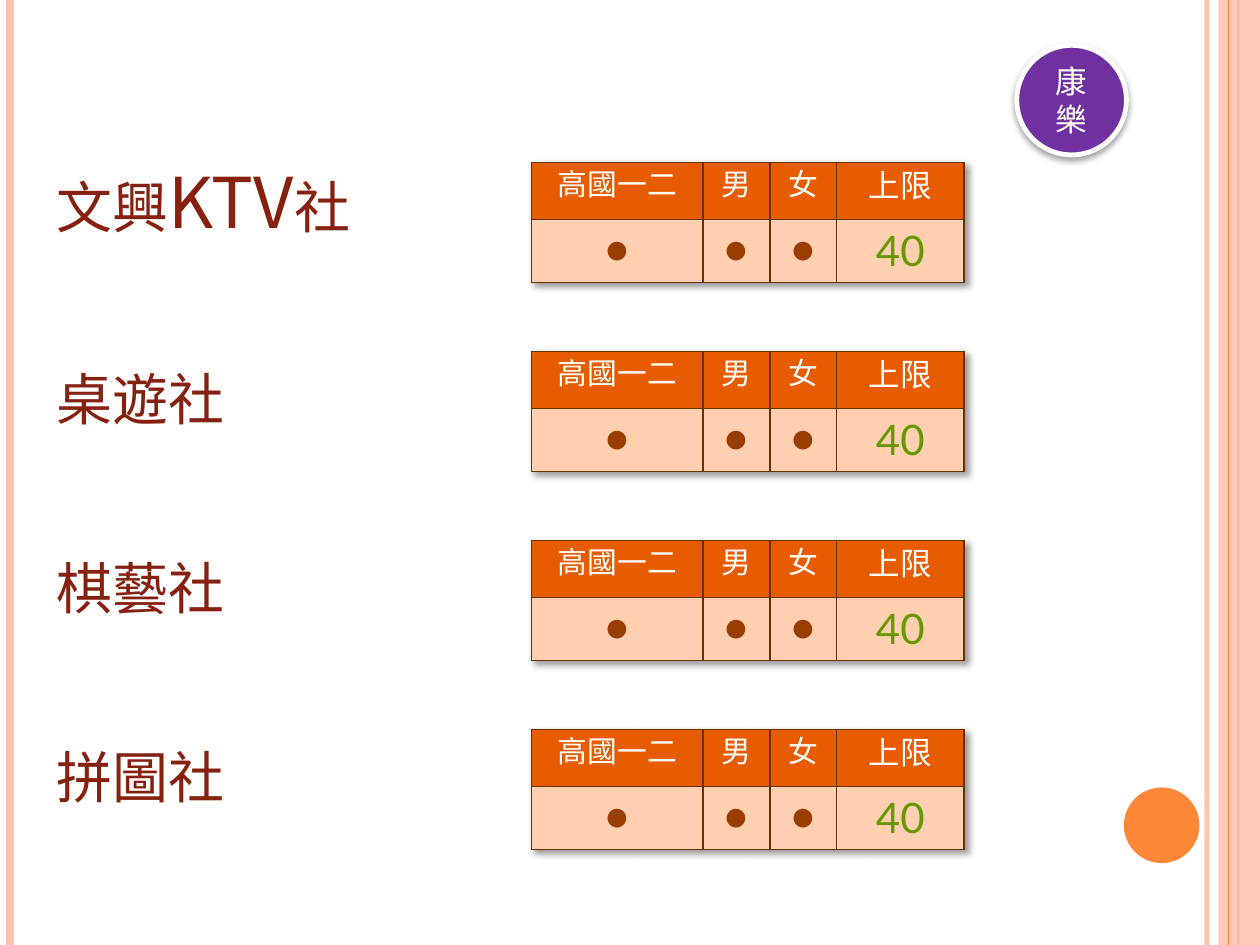
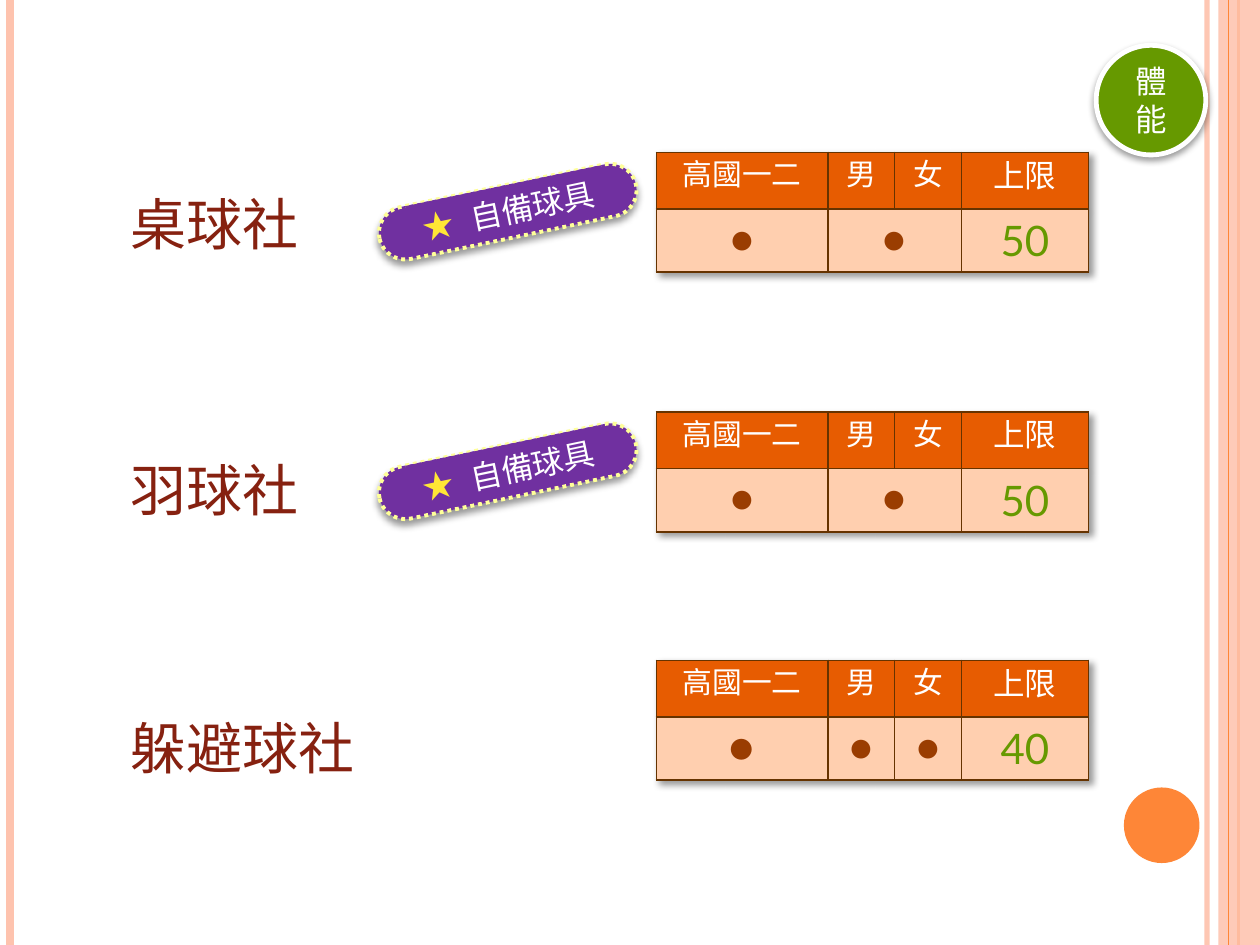
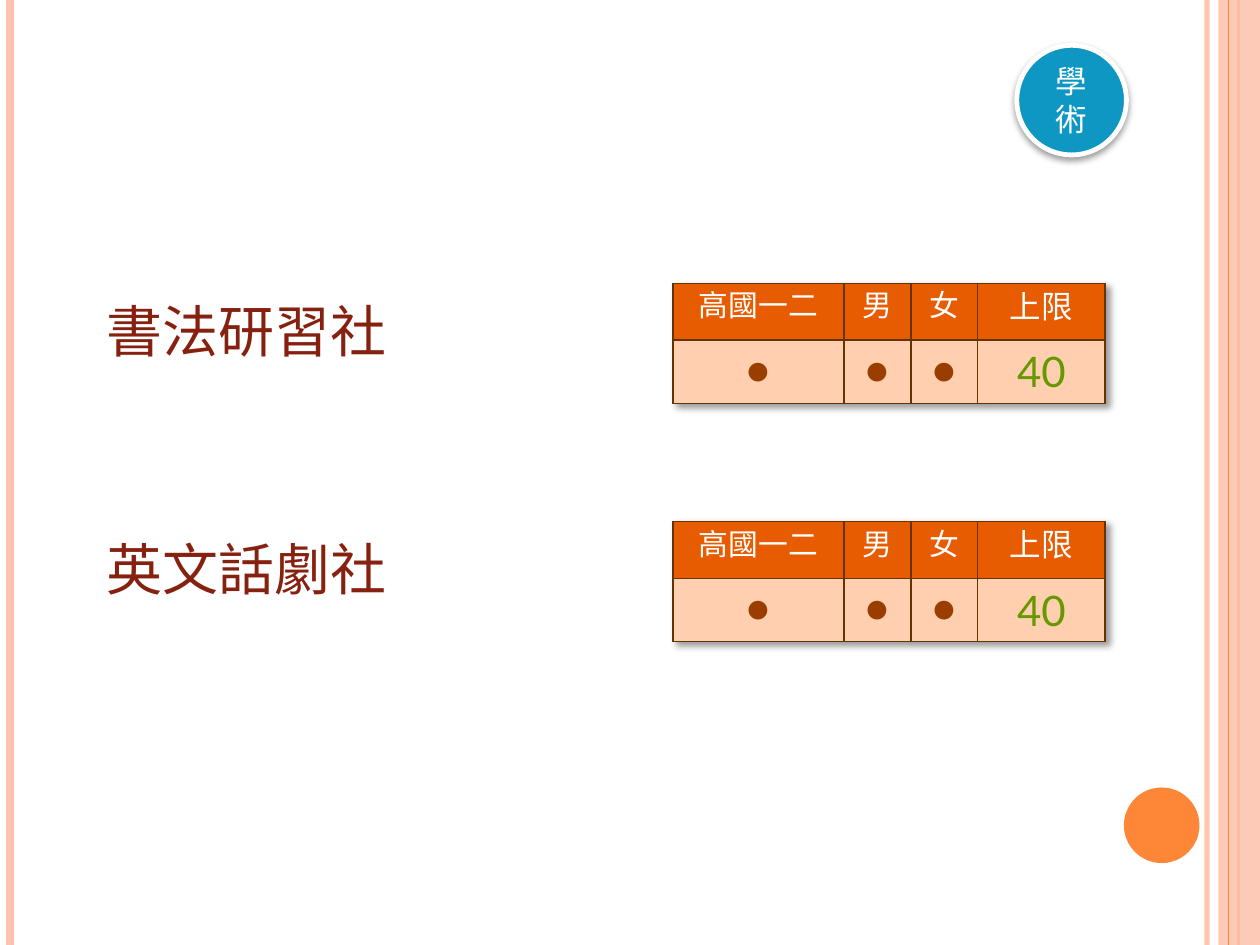
import pptx
import pptx.util
import pptx.dml.color
import pptx.enum.dml
import pptx.enum.shapes
import pptx.enum.text
import pptx.oxml
import pptx.oxml.ns
from lxml import etree

Inches = pptx.util.Inches
Pt = pptx.util.Pt
SHAPE = pptx.enum.shapes.MSO_SHAPE
ANCHOR = pptx.enum.text.MSO_ANCHOR
CENTER = pptx.enum.text.PP_ALIGN.CENTER
qn = pptx.oxml.ns.qn

WHITE, PEACH, ORANGE = "FFFFFF", "FEC3AE", "FE8637"
PURPLE, GREEN, BLUE = "7030A0", "669900", "0E97C2"
HEADER_FILL, BODY_FILL, BORDER = "E75C01", "FFCFAF", "663300"
MARK, TITLE_COLOR = "9A3D01", "862110"
STAR, PILL_EDGE = "FFE636", "FFFF99"
DISPLAY, TITLE_FONT = "TeX Gyre Adventor", "Noto Sans CJK SC"
HEADINGS = [("高國一二", 17), ("男", 17), ("女", 17), ("上限", 18)]
COLUMNS = [1.36, 0.53, 0.53, 1.01]
ROW_HEIGHT = 0.45


def rgb(value):
    return pptx.dml.color.RGBColor.from_string(value)


def inches(*lengths):
    return [Inches(length) for length in lengths]


def add_run(paragraph, text, size, font, color, **attributes):
    run = paragraph.add_run()
    run.text = text
    for key, value in {"size": Pt(size), "name": font, "bold": False}.items():
        setattr(run.font, key, value)
    run.font.color.rgb = rgb(color)
    properties = run.font._element
    etree.SubElement(properties, qn("a:ea"), typeface=font)
    for key, value in attributes.items():
        properties.set(key, value)


def set_alpha(element, percent):
    for color in element.iter(qn("a:srgbClr")):
        etree.SubElement(color, qn("a:alpha"), val=str(percent * 1000))


def add_shadow(effects, blur, distance, angle):
    shadow = etree.SubElement(effects, qn("a:outerShdw"), blurRad=str(Pt(blur)),
                              dist=str(Pt(distance)), dir=str(angle * 60000),
                              algn="tl", rotWithShape="0")
    etree.SubElement(shadow, qn("a:srgbClr"), val="000000")
    set_alpha(shadow, 40)


def filled_shape(shapes, kind, box, color, edge=None, edge_width=0):
    shape = shapes.add_shape(kind, *inches(*box))
    shape.shadow.inherit = False
    shape.fill.solid()
    shape.fill.fore_color.rgb = rgb(color)
    if edge:
        shape.line.color.rgb = rgb(edge)
        shape.line.width = Pt(edge_width)
    else:
        shape.line.fill.background()
    return shape


def stripe(slide, x, color, width, alpha=100):
    line = slide.shapes.add_connector(pptx.enum.shapes.MSO_CONNECTOR.STRAIGHT,
                                      *inches(x, 0, x, 7.5))
    line.line.color.rgb = rgb(color)
    line.line.width = Pt(width)
    properties = line.element.spPr
    if alpha < 100:
        set_alpha(properties, alpha)
    etree.SubElement(properties, qn("a:effectLst"))


def frame(slide):
    stripe(slide, 9.58, PEACH, 3, 93)
    stripe(slide, 0.08, PEACH, 4.5)
    stripe(slide, 9.83, ORANGE, 1.5)
    band = filled_shape(slide.shapes, SHAPE.RECTANGLE, (9.67, 0, 0.33, 7.5), PEACH)
    set_alpha(band.element.spPr, 87)
    stripe(slide, 9.75, ORANGE, 0.75)
    filled_shape(slide.shapes, SHAPE.OVAL, (8.92, 6.25, 0.6, 0.6), ORANGE)


def category_badge(slide, left, category, color):
    badge = filled_shape(slide.shapes, SHAPE.OVAL, (left, 0.36, 0.87, 0.87),
                         color, WHITE, 2.75)
    add_shadow(badge.element.spPr.find(qn("a:effectLst")), 4, 2, 90)
    frame_text = badge.text_frame
    for key, value in {"word_wrap": True, "vertical_anchor": ANCHOR.MIDDLE}.items():
        setattr(frame_text, key, value)
    paragraph = frame_text.paragraphs[0]
    paragraph.alignment = CENTER
    add_run(paragraph, category, 18, DISPLAY, WHITE)


def club_title(slide, left, top, width, parts):
    title = slide.shapes.add_textbox(*inches(left, top, width, 1.25)).text_frame
    for key, value in {"word_wrap": True, "vertical_anchor": ANCHOR.BOTTOM}.items():
        setattr(title, key, value)
    for text, size in parts:
        add_run(title.paragraphs[0], text, size, TITLE_FONT, TITLE_COLOR, cap="small")


def fill_cell(cell, text, size, font, color, fill, anchor):
    cell.fill.solid()
    cell.fill.fore_color.rgb = rgb(fill)
    cell.vertical_anchor = anchor
    properties = cell._tc.get_or_add_tcPr()
    for position, side in enumerate("LRTB"):
        border = etree.Element(qn(f"a:ln{side}"), w=str(Pt(1)))
        solid = etree.SubElement(border, qn("a:solidFill"))
        etree.SubElement(solid, qn("a:srgbClr"), val=BORDER)
        properties.insert(position, border)
    if text:
        paragraph = cell.text_frame.paragraphs[0]
        paragraph.alignment = CENTER
        add_run(paragraph, text, size, font, color)


def quota_table(slide, left, top, limit, mixed=False, first_mark=18):
    table = slide.shapes.add_table(2, 4, *inches(left, top, sum(COLUMNS),
                                                 2 * ROW_HEIGHT)).table
    table.horz_banding = False
    effects = etree.Element(qn("a:effectLst"))
    add_shadow(effects, 4, 3, 45)
    table._tbl.tblPr.insert(0, effects)
    for column, width in zip(table.columns, COLUMNS):
        column.width = Inches(width)
    for row in table.rows:
        row.height = Inches(ROW_HEIGHT)
    for index, (heading, size) in enumerate(HEADINGS):
        fill_cell(table.cell(0, index), heading, size, "Arial", WHITE,
                  HEADER_FILL, ANCHOR.TOP)
    if mixed:
        table.cell(1, 1).merge(table.cell(1, 2))
    marks = [("●", first_mark), ("●", 18), ("" if mixed else "●", 18)]
    for index, (mark, size) in enumerate(marks):
        fill_cell(table.cell(1, index), mark, size, DISPLAY, MARK,
                  BODY_FILL, ANCHOR.MIDDLE)
    fill_cell(table.cell(1, 3), limit, 24, "Lato", GREEN, BODY_FILL, ANCHOR.MIDDLE)


def equipment_pill(slide, left, top):
    shapes = slide.shapes.add_group_shape().shapes
    pill = filled_shape(shapes, SHAPE.ROUNDED_RECTANGLE, (left, top, 2.08, 0.42),
                        PURPLE, PILL_EDGE, 2.25)
    pill.adjustments[0] = 0.5
    pill.line.dash_style = pptx.enum.dml.MSO_LINE.ROUND_DOT
    add_shadow(pill.element.spPr.find(qn("a:effectLst")), 4, 3, 90)
    label = filled_shape(shapes, SHAPE.RECTANGLE, (left + 0.25, top, 1.59, 0.4), PURPLE)
    for part in (pill, label):
        part.rotation = -11.8
    label_format = {"word_wrap": False, "vertical_anchor": ANCHOR.MIDDLE,
                    "margin_top": 0, "margin_bottom": 0}
    for key, value in label_format.items():
        setattr(label.text_frame, key, value)
    paragraph = label.text_frame.paragraphs[0]
    paragraph.alignment = CENTER
    add_run(paragraph, "★ ", 18, DISPLAY, STAR, spc="250")
    add_run(paragraph, "自備球具", 18, DISPLAY, WHITE)


def new_slide(deck):
    slide = deck.slides.add_slide(deck.slide_layouts[6])
    frame(slide)
    return slide


def evenly_spaced_slide(deck, category, color, clubs, left, top, pitch, table_left):
    slide = new_slide(deck)
    for index, parts in enumerate(clubs):
        row_top = top + index * pitch
        quota_table(slide, table_left, row_top + 0.54, "40")
        club_title(slide, left, row_top, 8.17, parts)
    category_badge(slide, 8.07, category, color)


def sports_slide(deck):
    slide = new_slide(deck)
    left, table_left = 0.94, 5.21
    for club, title_top, table_top in [("桌球社", 0.86, 1.21), ("羽球社", 2.97, 3.27)]:
        quota_table(slide, table_left, table_top, "50", mixed=True)
        club_title(slide, left, title_top, 1.98, [(club, 40)])
        equipment_pill(slide, table_left - 2.22, table_top + 0.26)
    quota_table(slide, table_left, 5.24, "40", first_mark=20)
    club_title(slide, left, 5.02, 9.65, [("躲避球社", 40)])
    category_badge(slide, 8.7, "體能", GREEN)


def main():
    deck = pptx.Presentation()
    deck.slide_width, deck.slide_height = inches(10, 7.5)
    leisure = [[("文興", 40), ("ktv", 50), ("社", 40)],
               [("桌遊社", 40)], [("棋藝社", 40)], [("拼圖社", 40)]]
    academic = [[("書法研習社", 40)], [("英文話劇社", 40)]]
    evenly_spaced_slide(deck, "康樂", PURPLE, leisure, 0.35, 0.75, 1.5, 4.22)
    sports_slide(deck)
    evenly_spaced_slide(deck, "學術", BLUE, academic, 0.75, 1.71, 1.89, 5.34)
    deck.save("out.pptx")


if __name__ == "__main__":
    main()
